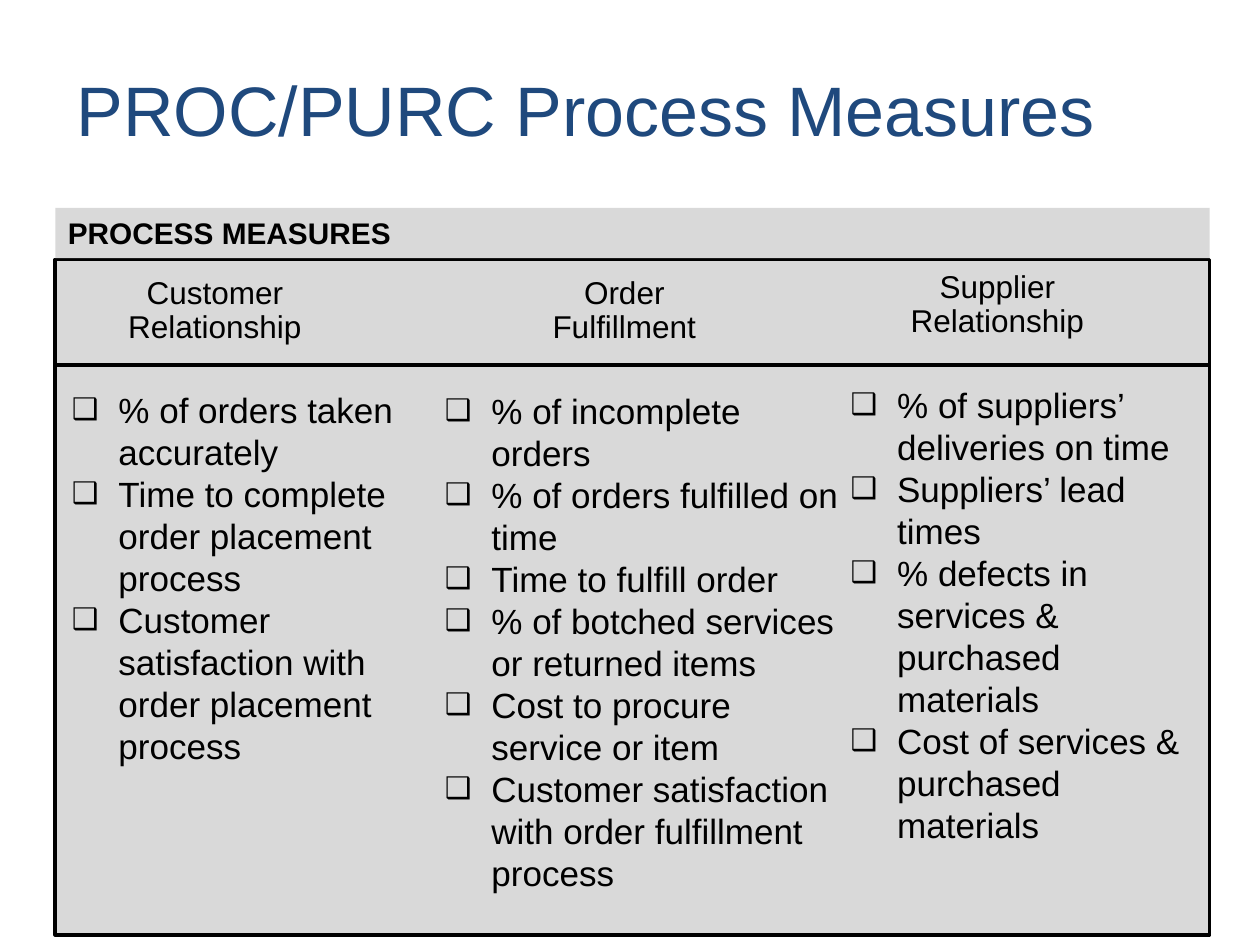
from lxml import etree
from pptx import Presentation
from pptx.dml.color import RGBColor
from pptx.enum.shapes import MSO_CONNECTOR, MSO_SHAPE
from pptx.enum.text import MSO_ANCHOR, MSO_AUTO_SIZE, PP_ALIGN
from pptx.oxml.ns import qn
from pptx.util import Inches, Pt

LINE = MSO_CONNECTOR.STRAIGHT
RECT = MSO_SHAPE.RECTANGLE
TOP, MIDDLE = MSO_ANCHOR.TOP, MSO_ANCHOR.MIDDLE
FIXED = MSO_AUTO_SIZE.NONE
LEFT, CENTER = PP_ALIGN.LEFT, PP_ALIGN.CENTER

BLACK = RGBColor(0x00, 0x00, 0x00)
GRAY = RGBColor(0xD9, 0xD9, 0xD9)
BLUE = RGBColor(0x1F, 0x49, 0x7D)

# heading, heading box (left, top, width), list box (left, top, width, height), items
COLUMNS = [
    ("Customer\nRelationship", (0.91, 2.15, 1.59), (0.47, 3.03, 2.96, 3.14), [
        "% of orders taken accurately",
        "Time to complete order placement process",
        "Customer satisfaction with order placement process",
    ]),
    ("Order\nFulfillment", (4.28, 2.15, 1.35), (3.43, 3.04, 3.4, 4.15), [
        "% of incomplete orders",
        "% of orders fulfilled on time",
        "Time to fulfill order",
        "% of botched services or returned items",
        "Cost to procure service or item",
        "Customer satisfaction with order fulfillment process",
    ]),
    ("Supplier\nRelationship", (7.12, 2.1, 1.59), (6.65, 2.99, 2.96, 3.81), [
        "% of suppliers’ deliveries on time",
        "Suppliers’ lead times",
        "% defects in services & purchased materials",
        "Cost of services & purchased materials",
    ]),
]


def write(shape, text, size, color=BLACK, bold=False, align=LEFT, anchor=TOP):
    frame = shape.text_frame
    frame.text = text
    frame.auto_size = FIXED
    frame.word_wrap = True
    frame.vertical_anchor = anchor
    for para in frame.paragraphs:
        para.alignment = align
        para.space_before = Pt(0)
        for run in para.runs:
            run.font.name = "Arial"
            run.font.size = Pt(size)
            run.font.bold = bold
            run.font.color.rgb = color


def place(shape, left, top, width, height):
    shape.left, shape.top = Inches(left), Inches(top)
    shape.width, shape.height = Inches(width), Inches(height)


deck = Presentation()
deck.slide_width, deck.slide_height = Inches(10), Inches(7.5)
slide = deck.slides.add_slide(deck.slide_layouts[4])
shapes = slide.shapes
title = shapes.title
_, first, second, spare, third = slide.placeholders
spare.element.getparent().remove(spare.element)

# Panel and band go behind the placeholders
panel = shapes.add_shape(RECT, Inches(0.44), Inches(2.06), Inches(9.16), Inches(5.36))
panel.line.color.rgb = BLACK
panel.line.width = Pt(2.25)
band = shapes.add_shape(RECT, Inches(0.44), Inches(1.65), Inches(9.16), Inches(0.4))
band.line.fill.background()
write(band, "PROCESS MEASURES", 17, bold=True, anchor=MIDDLE)
for box in (panel, band):
    box.shadow.inherit = False
    box.fill.solid()
    box.fill.fore_color.rgb = GRAY
    title.element.addprevious(box.element)

rule = shapes.add_connector(LINE, Inches(0.44), Inches(2.9), Inches(9.6), Inches(2.9))
rule.line.color.rgb = BLACK
rule.line.width = Pt(2.25)
etree.SubElement(rule.element.spPr, qn("a:effectLst"))
title.element.addprevious(rule.element)

place(title, 0.51, 0.48, 9, 0.77)
write(title, "PROC/PURC Process Measures", 40, BLUE, anchor=MIDDLE)

for body, (head, spot, area, items) in zip((first, second, third), COLUMNS):
    left, top, width = spot
    label = shapes.add_textbox(Inches(left), Inches(top), Inches(width), Inches(0.65))
    write(label, head, 18, align=CENTER)
    label.text_frame.word_wrap = False
    for para in label.text_frame.paragraphs:
        para.line_spacing = 0.9

    place(body, *area)
    write(body, "\n".join(items), 20)
    for para in body.text_frame.paragraphs:
        props = para._p.get_or_add_pPr()
        props.set("marL", str(Inches(0.37)))
        props.set("indent", str(Inches(-0.37)))
        etree.SubElement(props, qn("a:buSzPct"), val="85000")
        etree.SubElement(props, qn("a:buFont"), typeface="Arial")
        etree.SubElement(props, qn("a:buChar"), char="❑")

deck.save("out.pptx")
